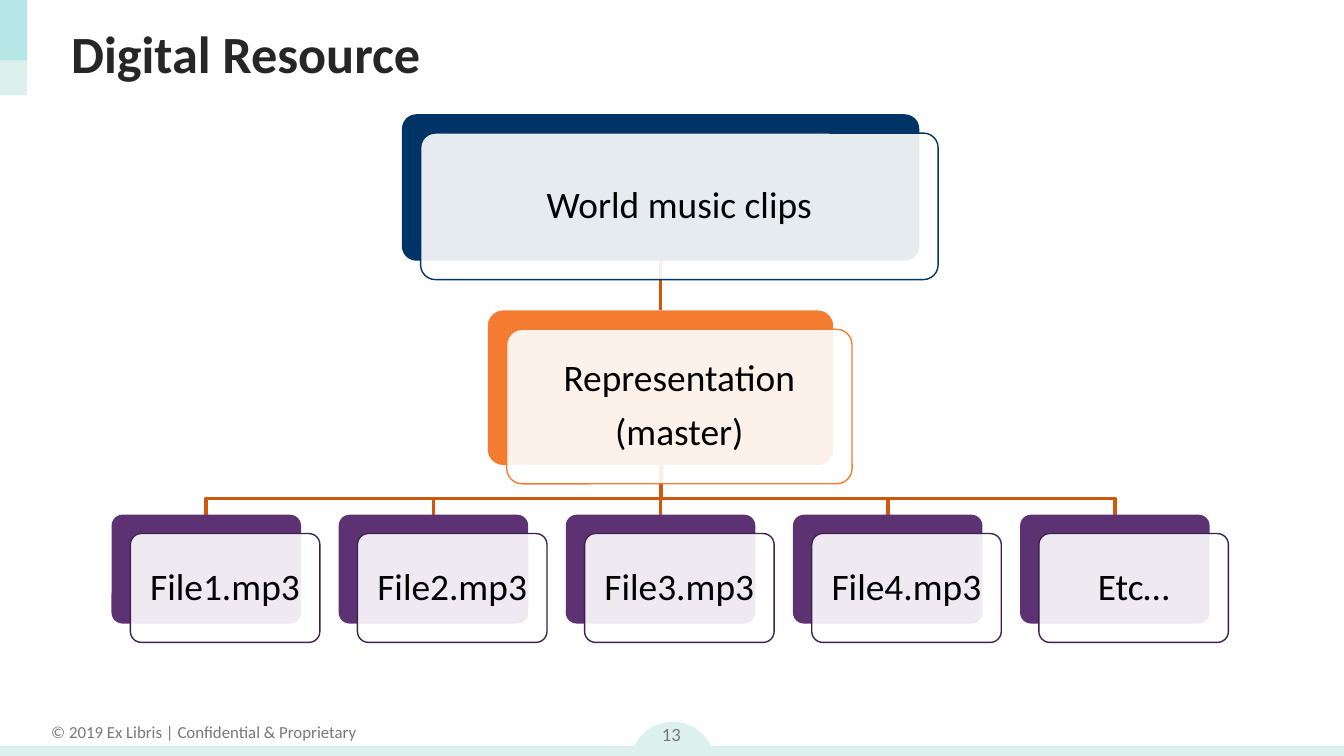
import lxml.etree
import pptx
import pptx.dml.color
import pptx.enum.shapes
import pptx.enum.text
import pptx.oxml.ns
import pptx.util

Inches = pptx.util.Inches
Pt = pptx.util.Pt
SHAPES = pptx.enum.shapes.MSO_SHAPE
ALIGN = pptx.enum.text.PP_ALIGN
ANCHOR = pptx.enum.text.MSO_ANCHOR

MINT = "DCF1EC"
GREY = "787878"
LINK_COLOUR = "D0570B"
CARD_OFFSET = 0.14
FILE_NAMES = ["File1.mp3", "File2.mp3", "File3.mp3", "File4.mp3", "Etc…"]
FILE_LEFT, FILE_STEP, FILE_WIDTH = 0.83, 1.69, 1.41
FILE_TOP = 3.83
BEND_TOP = 3.71


def colour(value):
    return pptx.dml.color.RGBColor.from_string(value)


def format_font(paragraph, size, value, bold=False):
    paragraph.font.name = "Calibri"
    paragraph.font.size = Pt(size)
    paragraph.font.bold = bold
    paragraph.font.color.rgb = colour(value)


def add_filled_shape(slide, kind, left, top, width, height, fill, opacity=100):
    shape = slide.shapes.add_shape(
        kind, Inches(left), Inches(top), Inches(width), Inches(height))
    shape.shadow.inherit = False
    shape.fill.solid()
    shape.fill.fore_color.rgb = colour(fill)
    shape.line.fill.background()
    if opacity < 100:
        solid_fill = shape._element.spPr.find(pptx.oxml.ns.qn("a:solidFill"))
        alpha = lxml.etree.SubElement(solid_fill[0], pptx.oxml.ns.qn("a:alpha"))
        alpha.set("val", str(opacity * 1000))
    return shape


def add_small_text(slide, text, left, top, width, height, size, anchor, wrap):
    box = slide.shapes.add_textbox(
        Inches(left), Inches(top), Inches(width), Inches(height))
    frame = box.text_frame
    frame.word_wrap = wrap
    frame.vertical_anchor = anchor
    paragraph = frame.paragraphs[0]
    paragraph.text = text
    paragraph.alignment = ALIGN.CENTER
    format_font(paragraph, size, GREY)


def add_node(slide, lines, left, top, width, height, fill, outline):
    """Draw a coloured block with an offset translucent card; return the block."""
    block = add_filled_shape(
        slide, SHAPES.ROUNDED_RECTANGLE, left, top, width, height, fill)
    card = add_filled_shape(
        slide, SHAPES.ROUNDED_RECTANGLE, left + CARD_OFFSET, top + CARD_OFFSET,
        width, height, "FFFFFF", 90)
    card.line.color.rgb = colour(outline)
    card.line.width = Pt(0.75)
    for shape in (block, card):
        shape.adjustments[0] = 0.1

    frame = card.text_frame
    frame.word_wrap = True
    frame.vertical_anchor = ANCHOR.MIDDLE
    frame.margin_left = frame.margin_right = Inches(0.08)
    frame.margin_top = frame.margin_bottom = Inches(0.08)
    for index, line in enumerate(lines):
        paragraph = frame.add_paragraph() if index else frame.paragraphs[0]
        paragraph.text = line
        paragraph.alignment = ALIGN.CENTER
        paragraph.line_spacing = 0.9
        paragraph.space_after = Pt(7)
        format_font(paragraph, 20, "000000")
    return block


def style_link(link):
    link.line.color.rgb = colour(LINK_COLOUR)
    link.line.width = Pt(2)


def add_straight_link(slide, x, top, bottom):
    link = slide.shapes.add_connector(
        pptx.enum.shapes.MSO_CONNECTOR.STRAIGHT,
        Inches(x), Inches(top), Inches(x), Inches(bottom))
    style_link(link)
    properties = link._element.spPr
    lxml.etree.SubElement(properties, pptx.oxml.ns.qn("a:effectLst"))
    return link


def add_bent_link(slide, start_x, top, end_x, bottom):
    points = [(start_x, BEND_TOP), (end_x, BEND_TOP), (end_x, bottom)]
    builder = slide.shapes.build_freeform(Inches(start_x), Inches(top))
    builder.add_line_segments(
        [(Inches(x), Inches(y)) for x, y in points], close=False)
    link = builder.convert_to_shape()
    link.shadow.inherit = False
    link.fill.background()
    style_link(link)


def join(link, parent, child):
    link.begin_connect(parent, 2)
    link.end_connect(child, 0)


def add_template_parts(slide):
    add_filled_shape(slide, SHAPES.OVAL, 4.69, 5.37, 0.63, 0.63, MINT)
    add_small_text(slide, "© 2019 Ex Libris | Confidential & Proprietary",
                   0.27, 5.32, 2.49, 0.25, 9, ANCHOR.TOP, False)
    add_filled_shape(slide, SHAPES.RECTANGLE, 0, 5.55, 10, 0.11, MINT)
    add_filled_shape(slide, SHAPES.RECTANGLE, 0, 0, 0.2, 0.71, MINT)
    add_filled_shape(slide, SHAPES.RECTANGLE, 0, 0, 0.2, 0.45, "50CFDA", 27)
    add_small_text(slide, "13", 4.7, 5.26, 0.59, 0.4, 10, ANCHOR.MIDDLE, True)


def set_title(slide, text):
    title = slide.shapes.title
    title.left, title.top = Inches(0.43), Inches(0.08)
    title.width, title.height = Inches(9.21), Inches(0.63)
    frame = title.text_frame
    frame.text = text
    frame.auto_size = pptx.enum.text.MSO_AUTO_SIZE.NONE
    frame.vertical_anchor = ANCHOR.MIDDLE
    frame.paragraphs[0].alignment = ALIGN.LEFT
    format_font(frame.paragraphs[0], 28, "262626", bold=True)


def add_hierarchy(slide):
    file_lefts = [FILE_LEFT + FILE_STEP * i for i in range(len(FILE_NAMES))]
    file_centres = [left + FILE_WIDTH / 2 for left in file_lefts]
    middle = len(FILE_NAMES) // 2
    centre = file_centres[middle]

    for index, file_centre in enumerate(file_centres):
        if index != middle:
            add_bent_link(slide, centre, 3.46, file_centre, FILE_TOP)
    file_link = add_straight_link(slide, centre, 3.46, FILE_TOP)
    master_link = add_straight_link(slide, centre, 1.94, 2.31)

    resource = add_node(slide, ["World music clips"],
                        2.99, 0.85, 3.85, 1.09, "003466", "003466")
    master = add_node(slide, ["Representation", "(master)"],
                      3.63, 2.31, 2.57, 1.15, "F47C30", "F47C30")
    files = [add_node(slide, [name], left, FILE_TOP, FILE_WIDTH, 0.81,
                      "5D3273", "3E214C")
             for name, left in zip(FILE_NAMES, file_lefts)]
    join(master_link, resource, master)
    join(file_link, master, files[middle])


def main():
    presentation = pptx.Presentation()
    presentation.slide_width = Inches(10)
    presentation.slide_height = Inches(10) * 9 // 16
    slide = presentation.slides.add_slide(presentation.slide_layouts[5])
    add_template_parts(slide)
    set_title(slide, "Digital Resource")
    add_hierarchy(slide)
    presentation.save("out.pptx")


if __name__ == "__main__":
    main()
